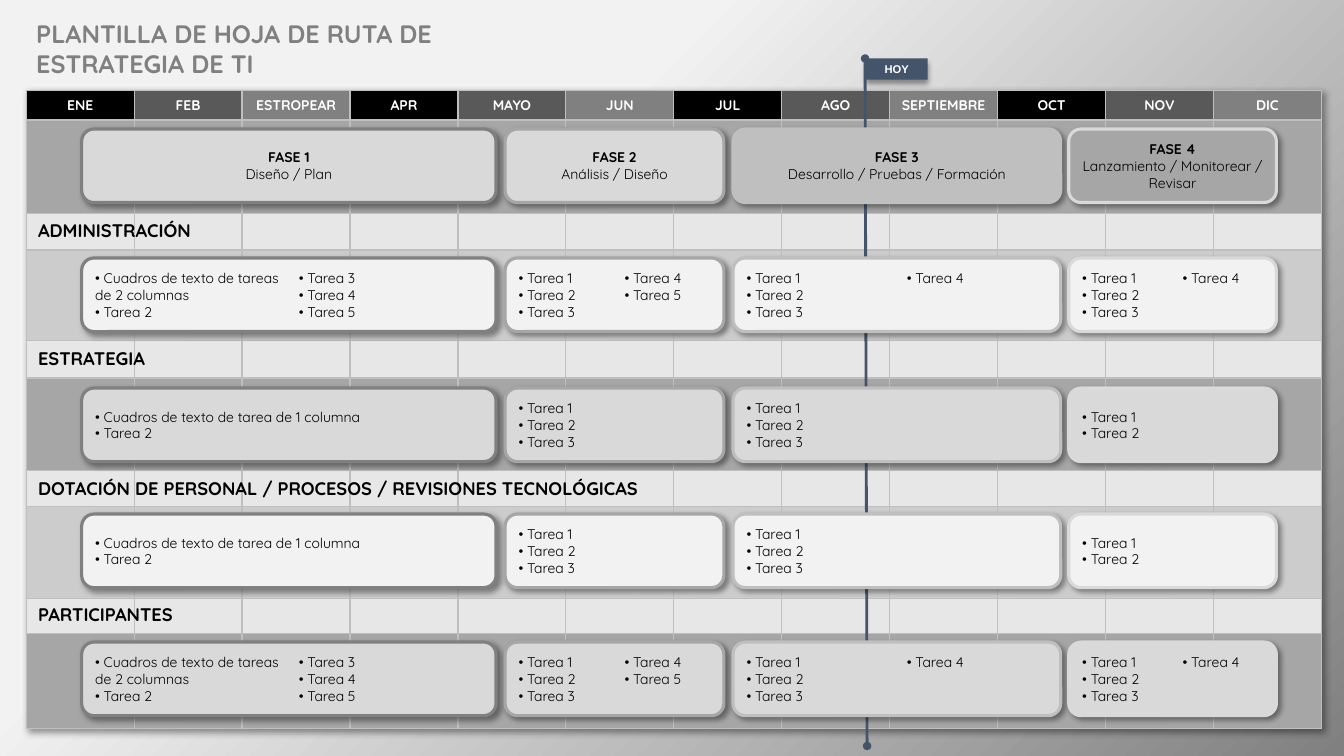
from lxml.etree import SubElement
from pptx import Presentation
from pptx.dml.color import RGBColor
from pptx.enum.shapes import MSO_CONNECTOR, MSO_SHAPE
from pptx.enum.text import MSO_ANCHOR, PP_ALIGN
from pptx.oxml.ns import qn
from pptx.util import Inches, Pt

BLACK = RGBColor(0x00, 0x00, 0x00)
WHITE = RGBColor(0xFF, 0xFF, 0xFF)
CHARCOAL = RGBColor(0x59, 0x59, 0x59)
GRAY = RGBColor(0x80, 0x80, 0x80)
MEDIUM = RGBColor(0xA6, 0xA6, 0xA6)
SILVER = RGBColor(0xBF, 0xBF, 0xBF)
ASH = RGBColor(0xCC, 0xCC, 0xCC)
LIGHT = RGBColor(0xD9, 0xD9, 0xD9)
BAND = RGBColor(0xE7, 0xE7, 0xE7)
PALE = RGBColor(0xF2, 0xF2, 0xF2)
SLATE = RGBColor(0x44, 0x54, 0x6A)
FONT = "Quicksand"

TITLE = "PLANTILLA DE HOJA DE RUTA DE ESTRATEGIA DE TI"
MONTHS = ["ENE", "FEB", "ESTROPEAR", "APR", "MAYO", "JUN",
          "JUL", "AGO", "SEPTIEMBRE", "OCT", "NOV", "DIC"]
MONTH_FILLS = [BLACK, CHARCOAL, GRAY]
TABLE_LEFT, TABLE_TOP, TABLE_WIDTH = 0.26, 0.9, 12.85
ROW_HEIGHTS = [0.29, 0.93, 0.36, 0.9, 0.37, 0.92, 0.36, 0.91, 0.35, 0.94]
ROW_FILLS = [MEDIUM, BAND, ASH, BAND, MEDIUM, BAND, ASH, BAND, MEDIUM]

PHASES = [
    ("FASE 1", "Diseño / Plan", 0.81, 4.11, LIGHT, GRAY),
    ("FASE 2", "Análisis / Diseño", 5.01, 2.17, LIGHT, MEDIUM),
    ("FASE 3", "Desarrollo / Pruebas / Formación", 7.27, 3.25, SILVER, SILVER),
    ("FASE 4", "Lanzamiento / Monitorear / Revisar", 10.6, 2.06, MEDIUM, LIGHT),
]
PHASE_TOP, BOX_HEIGHT = 1.28, 0.73


def tasks(first, last):
    return [f"• Tarea {number}" for number in range(first, last + 1)]


TWO_COLUMN_TASKS = [["• Cuadros de texto de tareas de 2 columnas"] + tasks(2, 5),
                    tasks(1, 5), tasks(1, 4), tasks(1, 4)]
ONE_COLUMN_TASKS = [["• Cuadros de texto de tarea de 1 columna"] + tasks(2, 2),
                    tasks(1, 3), tasks(1, 3), tasks(1, 2)]
SECTIONS = [
    ("ADMINISTRACIÓN", 2.13, 2.56, PALE, 2, TWO_COLUMN_TASKS),
    ("ESTRATEGIA", 3.4, 3.85, LIGHT, 1, ONE_COLUMN_TASKS),
    ("DOTACIÓN DE PERSONAL / PROCESOS / REVISIONES TECNOLÓGICAS",
     4.69, 5.1, PALE, 1, ONE_COLUMN_TASKS),
    ("PARTICIPANTES", 5.94, 6.37, LIGHT, 2, TWO_COLUMN_TASKS),
]


def add_shadow(properties, angle):
    effects = properties.find(qn("a:effectLst"))
    if effects is None:
        effects = SubElement(properties, qn("a:effectLst"))
    shadow = SubElement(effects, qn("a:outerShdw"), blurRad=str(Pt(4)), dist=str(Pt(3)),
                        dir=str(angle * 60000), algn="tl", rotWithShape="0")
    color = SubElement(shadow, qn("a:srgbClr"), val=str(BLACK))
    SubElement(color, qn("a:alpha"), val="40000")


def write(frame, lines, size, color, align=PP_ALIGN.LEFT, font=FONT):
    frame.word_wrap = True
    for index, (text, bold) in enumerate(lines):
        paragraph = frame.add_paragraph() if index else frame.paragraphs[0]
        paragraph.alignment = align
        run = paragraph.add_run()
        run.text = text
        run.font.name = font
        run.font.size = Pt(size)
        run.font.bold = bold
        run.font.color.rgb = color


def add_text(slide, text, left, top, width, height, size, color):
    box = slide.shapes.add_textbox(Inches(left), Inches(top), Inches(width), Inches(height))
    write(box.text_frame, [(text, True)], size, color)


def add_panel(slide, kind, left, top, width, height, fill, line, angle):
    shape = slide.shapes.add_shape(kind, Inches(left), Inches(top), Inches(width), Inches(height))
    shape.shadow.inherit = False
    shape.fill.solid()
    shape.fill.fore_color.rgb = fill
    if line is None:
        shape.line.fill.background()
    else:
        shape.line.color.rgb = line
        shape.line.width = Pt(2.25)
    add_shadow(shape._element.spPr, angle)
    shape.text_frame.vertical_anchor = MSO_ANCHOR.MIDDLE
    return shape


def style_cell(cell, fill):
    cell.margin_top = cell.margin_bottom = 0
    cell.vertical_anchor = MSO_ANCHOR.MIDDLE
    properties = cell._tc.get_or_add_tcPr()
    for side in ("a:lnL", "a:lnR", "a:lnT", "a:lnB"):
        border = SubElement(properties, qn(side), w=str(Pt(1)))
        SubElement(SubElement(border, qn("a:solidFill")), qn("a:srgbClr"), val=str(SILVER))
    cell.fill.solid()
    cell.fill.fore_color.rgb = fill


def add_calendar(slide):
    table = slide.shapes.add_table(
        len(ROW_HEIGHTS), len(MONTHS), Inches(TABLE_LEFT), Inches(TABLE_TOP),
        Inches(TABLE_WIDTH), Inches(sum(ROW_HEIGHTS))).table
    table.first_row = table.horz_banding = False
    add_shadow(table._tbl.tblPr, 45)
    style_id = table._tbl.tblPr.find(qn("a:tableStyleId"))
    if style_id is not None:
        table._tbl.tblPr.append(style_id)
    for row, height in zip(table.rows, ROW_HEIGHTS):
        row.height = Inches(height)
    for column, month in enumerate(MONTHS):
        table.columns[column].width = Inches(TABLE_WIDTH / len(MONTHS))
        header = table.cell(0, column)
        style_cell(header, MONTH_FILLS[column % len(MONTH_FILLS)])
        header.margin_left = header.margin_right = Inches(0.05)
        write(header.text_frame, [(month, True)], 10, WHITE, PP_ALIGN.CENTER)
        for row, fill in enumerate(ROW_FILLS, 1):
            style_cell(table.cell(row, column), fill)


def add_today(slide):
    flag = add_panel(slide, MSO_SHAPE.SNIP_1_RECTANGLE, 8.59, 0.58, 0.61, 0.21, SLATE, None, 90)
    flag.adjustments[0] = 0
    frame = flag.text_frame
    frame.margin_top = frame.margin_bottom = 0
    write(frame, [("HOY", True)], 8, WHITE, PP_ALIGN.CENTER, "Arial")
    marker = slide.shapes.add_connector(
        MSO_CONNECTOR.STRAIGHT, Inches(8.58), Inches(0.58), Inches(8.6), Inches(7.4))
    marker.line.color.rgb = SLATE
    marker.line.width = Pt(2)
    line = marker.line._get_or_add_ln()
    for end in ("a:headEnd", "a:tailEnd"):
        SubElement(line, qn(end), type="oval")
    SubElement(marker._element.spPr, qn("a:effectLst"))


def main():
    presentation = Presentation()
    presentation.slide_width = Inches(13.33)
    presentation.slide_height = Inches(7.5)
    slide = presentation.slides.add_slide(presentation.slide_layouts[6])

    background = slide.background.fill
    background.gradient()
    background.gradient_angle = 315
    for stop, position, color in zip(background.gradient_stops, (0.34, 1), (PALE, GRAY)):
        stop.position = position
        stop.color.rgb = color

    add_text(slide, TITLE, 0.26, 0.13, 4.19, 0.7, 18, GRAY)
    add_calendar(slide)
    add_today(slide)

    for name, summary, left, width, fill, line in PHASES:
        panel = add_panel(slide, MSO_SHAPE.ROUNDED_RECTANGLE, left, PHASE_TOP,
                          width, BOX_HEIGHT, fill, line, 45)
        write(panel.text_frame, [(name, True), (summary, False)], 10, BLACK, PP_ALIGN.CENTER)

    for label, label_top, box_top, fill, columns, task_lists in SECTIONS:
        add_text(slide, label, 0.28, label_top, 12.83, 0.32, 13, BLACK)
        for (_, _, left, width, _, line), items in zip(PHASES, task_lists):
            panel = add_panel(slide, MSO_SHAPE.ROUNDED_RECTANGLE, left, box_top,
                              width, BOX_HEIGHT, fill, line, 45)
            write(panel.text_frame, [(item, False) for item in items], 10, BLACK)
            if columns > 1:
                body = panel.text_frame._txBody.bodyPr
                body.set("numCol", str(columns))
                body.set("spcCol", str(Inches(0.2)))

    presentation.save("out.pptx")


if __name__ == "__main__":
    main()
